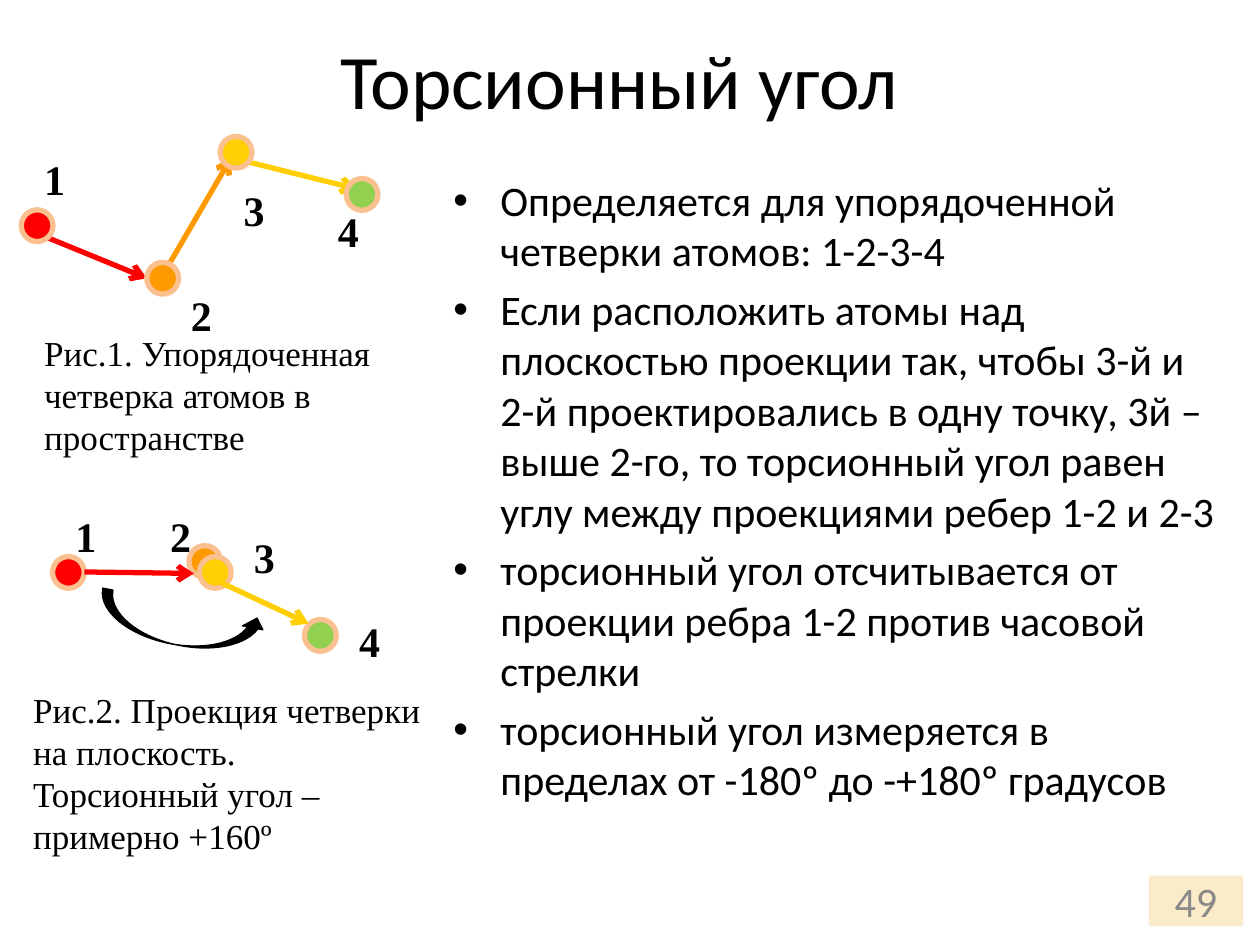
from lxml import etree
from pptx import Presentation
from pptx import util as u
from pptx.dml.color import RGBColor
from pptx.enum import shapes, text
from pptx.oxml.ns import qn

SANS, SERIF = "Calibri", "Times New Roman"
BLACK, RED, ORANGE, YELLOW, GREEN = "000000", "FF0000", "FF9900", "FFCE03", "92D050"
RIM, PAGE_FILL, PAGE_TEXT = "FAC090", "FCEBC8", "898989"
ATOM_COLORS = [RED, ORANGE, YELLOW, GREEN]
ATOM_SIZE = 0.64

# Positions are in centimetres; atoms are given by their centres
SPACE_ATOMS = [(0.75, 4.55), (3.28, 5.61), (4.76, 3.07), (7.3, 3.92)]
SPACE_BONDS = [
    (0.64, 4.66, 2.96, 5.61, RED),
    (3.18, 5.72, 4.66, 3.18, ORANGE),
    (4.66, 3.18, 7.2, 3.81, YELLOW),
]
SPACE_LABELS = [(0.64, 2.96), (3.6, 5.72), (4.66, 3.6), (6.56, 4.02)]

PLANE_ATOMS = [(1.38, 11.54), (4.13, 11.32), (4.34, 11.54), (6.46, 12.81)]
PLANE_BONDS = [
    (1.7, 11.53, 3.91, 11.56, RED),
    (4.23, 11.64, 6.22, 12.57, YELLOW),
]
PLANE_LABELS = [(1.27, 10.16), (3.18, 10.16), (4.87, 10.58), (6.99, 12.28)]

DEFINITION = [
    "Определяется для упорядоченной четверки атомов: 1-2-3-4",
    "Если расположить атомы над плоскостью проекции так, чтобы 3-й и \v"
    "2-й проектировались в одну точку, 3й – выше 2-го, то торсионный угол "
    "равен углу между проекциями ребер 1-2 и 2-3",
    "торсионный угол отсчитывается от проекции ребра 1-2 против часовой стрелки",
    "торсионный угол измеряется в пределах от -180º до -+180º градусов",
]


def rgb(color):
    return RGBColor.from_string(color)


def cm(*lengths):
    return [u.Cm(length) for length in lengths]


def style_font(paragraph, size, face, color=BLACK, bold=False):
    for run in paragraph.runs:
        run.font.size = u.Pt(size)
        run.font.name = face
        run.font.bold = bold
        run.font.color.rgb = rgb(color)


def add_text(slide, box, lines, size, face, bold=False, wrap=True):
    frame = slide.shapes.add_textbox(*cm(*box)).text_frame
    frame.word_wrap = wrap
    frame.text = "\n".join(lines)
    for paragraph in frame.paragraphs:
        style_font(paragraph, size, face, bold=bold)
    return frame


def add_bullet(paragraph):
    properties = paragraph._p.get_or_add_pPr()
    indent = u.Cm(0.95)
    properties.set("marL", str(indent))
    properties.set("indent", str(-indent))
    etree.SubElement(properties, qn("a:buFont")).set("typeface", "Arial")
    etree.SubElement(properties, qn("a:buChar")).set("char", "•")


def add_filled(slide, preset, box, fill, rim=None, rim_width=3):
    shape = slide.shapes.add_shape(preset, *cm(*box))
    shape.shadow.inherit = False
    shape.fill.solid()
    shape.fill.fore_color.rgb = rgb(fill)
    if rim:
        shape.line.color.rgb = rgb(rim)
        shape.line.width = u.Pt(rim_width)
    else:
        shape.line.fill.background()
    return shape


def add_atoms(slide, centres):
    for (x, y), color in zip(centres, ATOM_COLORS):
        box = (x - ATOM_SIZE / 2, y - ATOM_SIZE / 2, ATOM_SIZE, ATOM_SIZE)
        add_filled(slide, shapes.MSO_SHAPE.FLOWCHART_CONNECTOR, box, color, RIM)


def add_bonds(slide, bonds):
    for *ends, color in bonds:
        bond = slide.shapes.add_connector(shapes.MSO_CONNECTOR.STRAIGHT, *cm(*ends))
        bond.line.color.rgb = rgb(color)
        bond.line.width = u.Pt(3)
        properties = bond._element.spPr
        line = properties.find(qn("a:ln"))
        etree.SubElement(line, qn("a:tailEnd")).set("type", "arrow")
        etree.SubElement(properties, qn("a:effectLst"))


def add_labels(slide, corners):
    for number, corner in enumerate(corners, start=1):
        add_text(slide, (*corner, 0.94, 1.28), [str(number)], 24, SERIF,
                 bold=True, wrap=False)


def add_title(slide):
    frame = add_text(slide, (1.69, 0, 21.59, 3.18), ["Торсионный угол"], 44, SANS)
    frame.vertical_anchor = text.MSO_ANCHOR.MIDDLE
    frame.paragraphs[0].alignment = text.PP_ALIGN.CENTER


def add_definition(slide):
    frame = add_text(slide, (8.89, 3.39, 15.88, 14.81), DEFINITION, 24, SANS)
    for index, paragraph in enumerate(frame.paragraphs):
        add_bullet(paragraph)
        if index:
            paragraph.space_before = u.Pt(4.8)


def add_page_number(slide):
    page = add_filled(slide, shapes.MSO_SHAPE.RECTANGLE,
                      (23.16, 17.65, 1.9, 1.02), PAGE_FILL)
    page.text_frame.text = "49"
    page.text_frame.vertical_anchor = text.MSO_ANCHOR.MIDDLE
    number = page.text_frame.paragraphs[0]
    number.alignment = text.PP_ALIGN.CENTER
    style_font(number, 24, SANS, PAGE_TEXT)


def main():
    deck = Presentation()
    deck.slide_width, deck.slide_height = cm(25.4, 19.05)
    slide = deck.slides.add_slide(deck.slide_layouts[6])

    add_title(slide)
    add_definition(slide)

    # Figure 1: four atoms in space
    add_bonds(slide, SPACE_BONDS)
    add_atoms(slide, SPACE_ATOMS)
    add_labels(slide, SPACE_LABELS)
    add_text(slide, (0.64, 6.56, 8.53, 2.82),
             ["Рис.1. Упорядоченная четверка атомов в пространстве"], 20, SERIF)

    # Figure 2: projection with the torsion angle
    add_atoms(slide, PLANE_ATOMS)
    add_bonds(slide, PLANE_BONDS)
    add_labels(slide, PLANE_LABELS)
    angle = add_filled(slide, shapes.MSO_SHAPE.CURVED_RIGHT_ARROW,
                       (3.23, 10.9, 0.84, 3.38), BLACK, BLACK, 0.75)
    angle.rotation = 281
    add_text(slide, (0.42, 13.76, 8.53, 3.68),
             ["Рис.2. Проекция четверки на плоскость.",
              "Торсионный угол – примерно +160º"], 20, SERIF)

    add_page_number(slide)
    deck.save("out.pptx")


if __name__ == "__main__":
    main()
